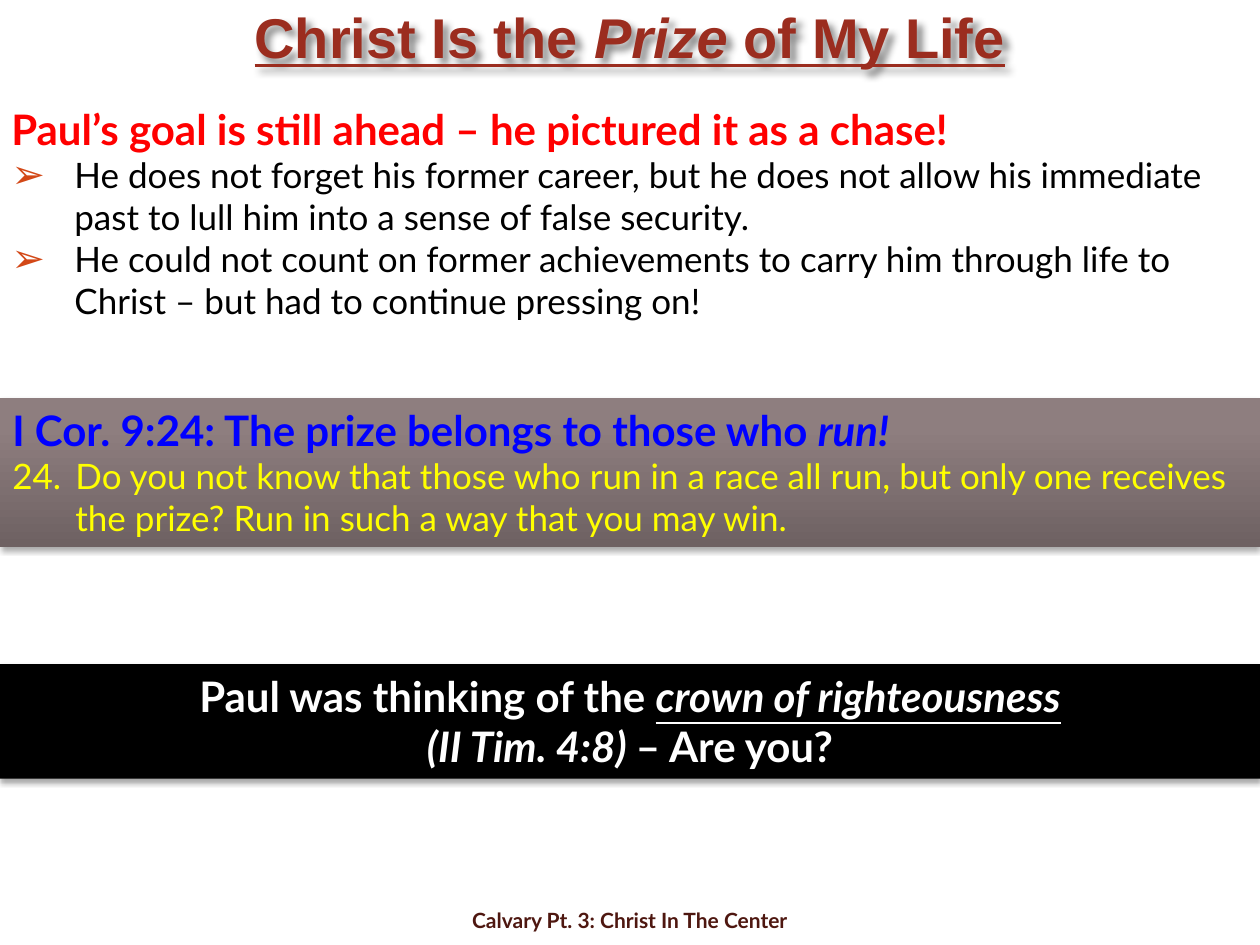
"""Build the slide on Christ as the prize of life."""
from lxml.etree import SubElement
from pptx import Presentation
from pptx.dml.color import RGBColor
from pptx.enum.shapes import MSO_SHAPE
from pptx.enum.text import MSO_ANCHOR, MSO_AUTO_SIZE, PP_ALIGN
from pptx.oxml.ns import qn
from pptx.util import Inches, Pt

WIDTH, HEIGHT = 10, 7.5
COLORS = {
    "title": "9B2D1F", "footer": "4E1710", "goal": "FF0000", "text": "000000",
    "bullet": "D34817", "verse_title": "0000FF", "verse": "FFFF00",
    "crown": "FFFFFF", "crown_band": "000000", "shadow": "000000",
}
VERSE_GRADIENT = [(0, "6E6162"), (80, "8E7E7F"), (100, "8F7E80")]

TITLE = [("Christ Is the ", "u"), ("Prize", "iu"), (" of My Life", "u")]
FOOTER = [("Calvary Pt. 3: Christ In The Center", "")]
GOAL = [("Paul’s goal is still ahead – he pictured it as a chase!", "")]
CHASE_POINTS = [
    "He does not forget his former career, but he does not allow his immediate "
    "past to lull him into a sense of false security.",
    "He could not count on former achievements to carry him through life to "
    "Christ – but had to continue pressing on!",
]
VERSE_TITLE = [("I Cor. 9:24: The prize belongs to those who ", ""), ("run!", "i")]
VERSE = [("24.\tDo you not know that those who run in a race all run, but only one "
          "receives the prize? Run in such a way that you may win.", "")]
CROWN_LINES = [
    [("Paul was thinking of the ", ""), ("crown of righteousness", "iu")],
    [("(II Tim. 4:8) ", "i"), ("– Are you?", "")],
]


def place(shape, left, top, width, height, anchor=MSO_ANCHOR.TOP):
    shape.left, shape.top = Inches(left), Inches(top)
    shape.width, shape.height = Inches(width), Inches(height)
    frame = shape.text_frame
    frame.word_wrap = True
    frame.auto_size = MSO_AUTO_SIZE.NONE
    frame.vertical_anchor = anchor
    return frame


def add_text(frame, runs, size=24, color="text", bold=True, font="Lato",
             align=PP_ALIGN.LEFT, hanging=True, bullet=None):
    first = frame.paragraphs[0]
    paragraph = frame.add_paragraph() if first.runs else first
    paragraph.alignment = align
    paragraph.space_before = paragraph.space_after = Pt(0)
    properties = paragraph._p.get_or_add_pPr()
    properties.set("marL", str(Inches(0.5) if hanging else 0))
    properties.set("indent", str(Inches(-0.5) if hanging else 0))
    if bullet:
        SubElement(SubElement(properties, qn("a:buClr")), qn("a:srgbClr"),
                   val=COLORS["bullet"])
        SubElement(properties, qn("a:buSzPct"), val="115000")
        SubElement(properties, qn("a:buFont"), typeface="Arial")
        SubElement(properties, qn("a:buChar"), char=bullet)
    else:
        SubElement(properties, qn("a:buNone"))
    for text, style in runs:
        run = paragraph.add_run()
        run.text = text
        run.font.name, run.font.size, run.font.bold = font, Pt(size), bold
        run.font.italic, run.font.underline = "i" in style, "u" in style
        run.font.color.rgb = RGBColor.from_string(COLORS[color])


def add_shadow(shape, blur, distance, degrees, opacity):
    shape.shadow.inherit = False
    effects = shape._element.spPr.find(qn("a:effectLst"))
    shadow = SubElement(effects, qn("a:outerShdw"), blurRad=str(Pt(blur)),
                        dist=str(Pt(distance)), dir=str(degrees * 60000),
                        algn="ctr", rotWithShape="0")
    color = SubElement(shadow, qn("a:srgbClr"), val=COLORS["shadow"])
    SubElement(color, qn("a:alpha"), val=str(opacity * 1000))


def add_band(slide, top, height):
    band = slide.shapes.add_shape(MSO_SHAPE.RECTANGLE, 0, 0, 0, 0)
    place(band, 0, top, WIDTH, height)
    band.line.fill.background()
    add_shadow(band, 3.1, 1.8, 90, 35)
    return band


def fill_gradient(shape, stops):
    shape.fill.gradient()
    shape.fill.gradient_angle = 90
    stop_list = shape._element.spPr.find(".//" + qn("a:gsLst"))
    for stop in list(stop_list):
        stop_list.remove(stop)
    for position, color in stops:
        stop = SubElement(stop_list, qn("a:gs"), pos=str(position * 1000))
        SubElement(stop, qn("a:srgbClr"), val=color)


def main():
    presentation = Presentation()
    presentation.slide_width, presentation.slide_height = Inches(WIDTH), Inches(HEIGHT)
    slide = presentation.slides.add_slide(presentation.slide_layouts[1])
    title, body = slide.placeholders

    frame = place(title, 0, 0, WIDTH, 0.58, MSO_ANCHOR.MIDDLE)
    title.fill.background()
    add_shadow(title, 4, 4, 45, 45)
    add_text(frame, TITLE, size=32, color="title", font="Arial",
             align=PP_ALIGN.CENTER, hanging=False)

    frame = place(body, -0.01, 0.77, WIDTH, 1.85)
    add_text(frame, GOAL, color="goal")
    for point in CHASE_POINTS:
        add_text(frame, [(point, "")], size=20, bold=False, bullet="➢")

    verse_band = add_band(slide, 3.16, 1.18)
    fill_gradient(verse_band, VERSE_GRADIENT)
    add_text(verse_band.text_frame, VERSE_TITLE, color="verse_title")
    add_text(verse_band.text_frame, VERSE, size=20, color="verse", bold=False)

    crown_band = add_band(slide, 5.27, 0.91)
    crown_band.fill.solid()
    crown_band.fill.fore_color.rgb = RGBColor.from_string(COLORS["crown_band"])
    for line in CROWN_LINES:
        add_text(crown_band.text_frame, line, color="crown", align=PP_ALIGN.CENTER)

    footer_width = 3.17
    footer = slide.shapes.add_textbox(0, 0, 0, 0)
    frame = place(footer, (WIDTH - footer_width) / 2, 7.1, footer_width, 0.4,
                  MSO_ANCHOR.MIDDLE)
    add_text(frame, FOOTER, size=12, color="footer", align=PP_ALIGN.CENTER, hanging=False)

    presentation.save("out.pptx")


if __name__ == "__main__":
    main()
